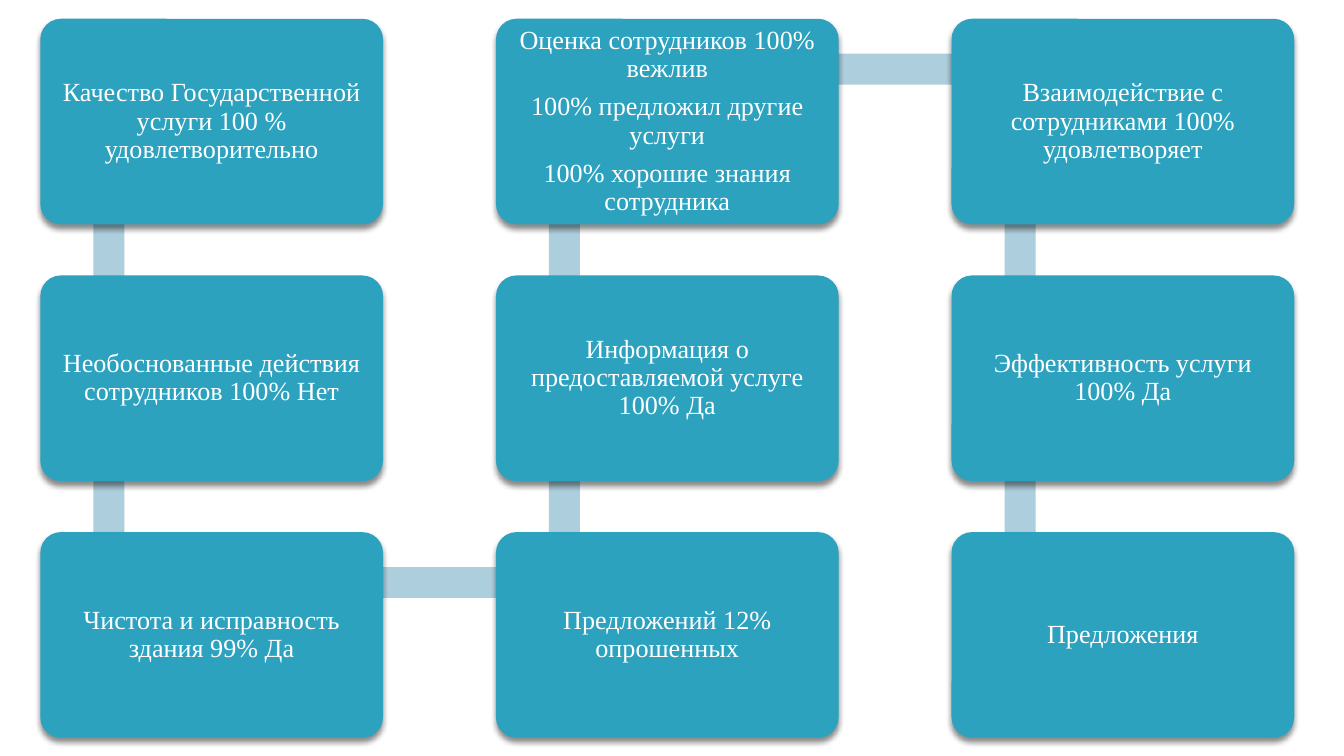
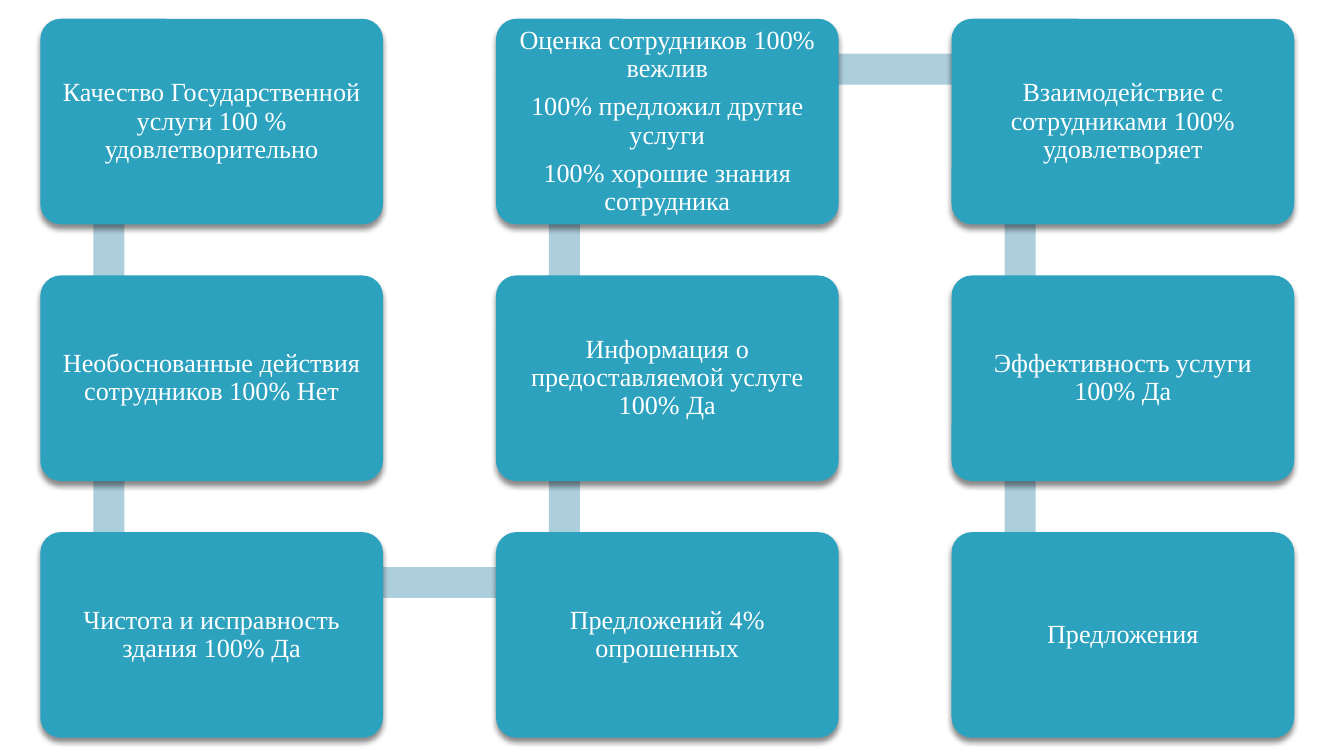
from lxml.etree import SubElement as Sub
from pptx import Presentation
from pptx.dml.color import RGBColor as RGB
from pptx.enum.shapes import MSO_SHAPE as Form
from pptx.enum.text import MSO_ANCHOR as Anchor, PP_ALIGN as Align
from pptx.oxml.ns import qn
from pptx.util import Inches, Pt

HUES = {"card": "2DA2BF", "bar": "ADCEDC", "text": "FFFFFF", "shade": "000000"}
FONT = "Times New Roman"
LEFT, TOP = 0.3, 0.14
WIDE, HIGH = 2.55, 1.53
STEP_X, STEP_Y = 3.39, 1.91
THICK = 0.23
ROWS, COLS = 3, 3


def paint(shape, hue):
    """Give a shape a plain fill with no line or shadow."""
    shape.fill.solid()
    shape.fill.fore_color.rgb = RGB.from_string(HUES[hue])
    shape.line.fill.background()
    shape.shadow.inherit = False


def shade(shape):
    """Drop a soft shadow straight below a shape."""
    effects = shape._element.spPr.find(qn("a:effectLst"))
    drop = Sub(effects, qn("a:outerShdw"), blurRad=str(Pt(3)),
               dist=str(Pt(2.4)), dir="5400000", rotWithShape="0")
    tint = Sub(drop, qn("a:srgbClr"), val=HUES["shade"])
    Sub(tint, qn("a:alpha"), val="45000")


def add_bar(shapes, box, after):
    """Draw the band that leads from one card box to the next."""
    (x, y), (next_x, next_y) = box, after
    if x == next_x:
        size, turn = STEP_Y - 0.01, 90 if next_y > y else 270
        place = x - 0.44, min(y, next_y) + 1.21
    else:
        size, turn = STEP_X - 0.01, 0
        place = x + 0.52, y + 0.26
    bar = shapes.add_shape(Form.RECTANGLE, *map(Inches, (*place, size, THICK)))
    bar.rotation = turn
    paint(bar, "bar")


def add_card(shapes, box, text):
    """Draw a rounded card with centred text in its box."""
    card = shapes.add_shape(Form.ROUNDED_RECTANGLE,
                            *map(Inches, (*box, WIDE, HIGH)))
    card.adjustments[0] = 0.1
    paint(card, "card")
    shade(card)
    frame = card.text_frame
    frame.text = text
    frame.word_wrap = True
    frame.vertical_anchor = Anchor.MIDDLE
    frame.margin_left = frame.margin_right = Inches(0.06)
    frame.margin_top = frame.margin_bottom = Inches(0.06)
    for para in frame.paragraphs:
        para.alignment = Align.CENTER
        para.line_spacing = 0.9
        para.space_after = Pt(5.4)
        for run in para.runs:
            run.font.name = FONT
            run.font.size = Pt(14)
            run.font.color.rgb = RGB.from_string(HUES["text"])


def snake():
    """List card corners down and up the columns in turn."""
    spots = []
    for col in range(COLS):
        rows = range(ROWS) if col % 2 == 0 else reversed(range(ROWS))
        spots += [(LEFT + col * STEP_X, TOP + row * STEP_Y) for row in rows]
    return spots


def add_survey(deck, clean, ideas):
    """Add a slide of survey results as a winding chain of cards."""
    texts = [
        "Качество Государственной услуги 100 % удовлетворительно",
        "Необоснованные действия сотрудников 100% Нет",
        f"Чистота и исправность здания {clean}% Да",
        f"Предложений {ideas}% опрошенных",
        "Информация о предоставляемой услуге 100% Да",
        "Оценка сотрудников 100% вежлив\n"
        "100% предложил другие услуги\n"
        "100% хорошие знания сотрудника",
        "Взаимодействие с сотрудниками 100% удовлетворяет",
        "Эффективность услуги 100% Да",
        "Предложения",
    ]
    slide = deck.slides.add_slide(deck.slide_layouts[6])
    shapes = slide.shapes.add_group_shape().shapes
    spots = snake()
    for box, after, text in zip(spots, spots[1:] + [None], texts):
        if after:
            add_bar(shapes, box, after)
        add_card(shapes, box, text)


def main():
    """Build and save the deck."""
    deck = Presentation()
    deck.slide_width = Inches(10)
    deck.slide_height = deck.slide_width * 9 // 16
    for clean, ideas in ((99, 12), (100, 4)):
        add_survey(deck, clean, ideas)
    deck.save("out.pptx")


if __name__ == "__main__":
    main()
